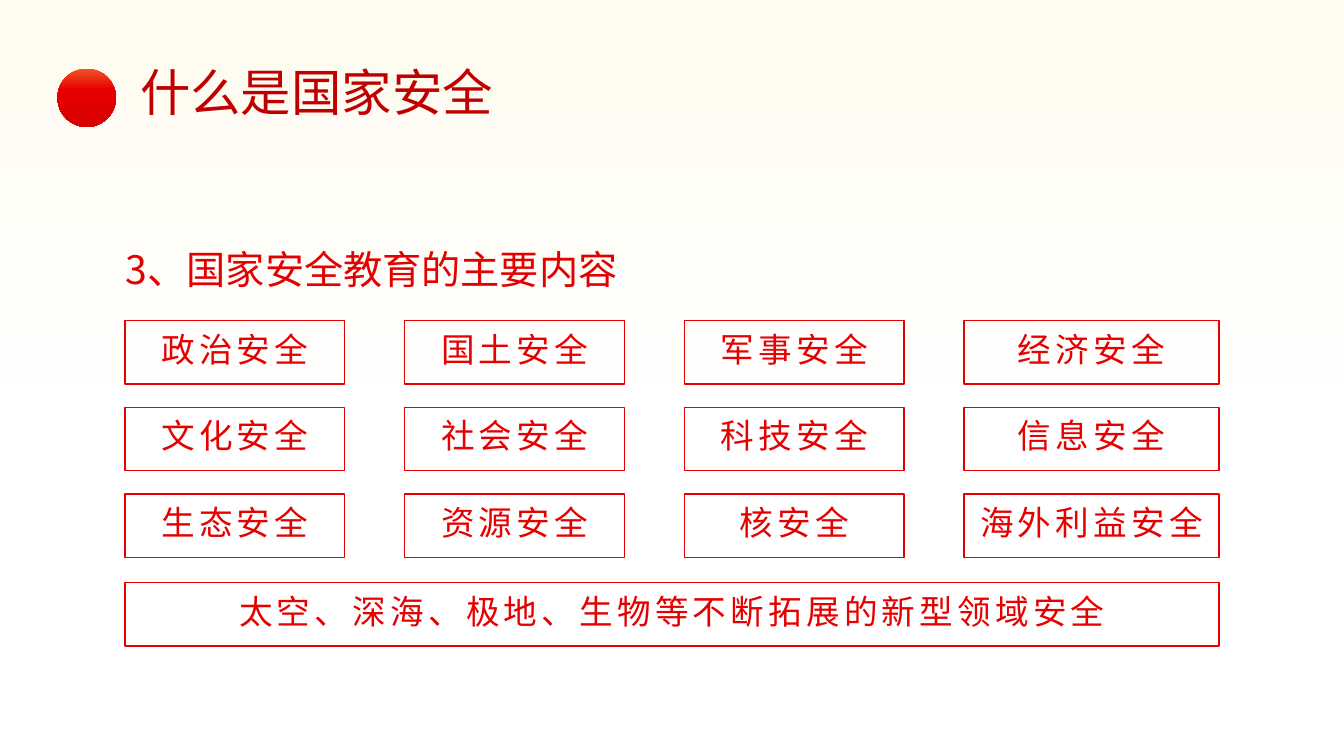
from copy import deepcopy
from dataclasses import dataclass

from lxml.etree import SubElement
from pptx import Presentation
from pptx.dml.color import RGBColor
from pptx.enum.shapes import MSO_SHAPE
from pptx.enum.text import MSO_ANCHOR, MSO_AUTO_SIZE, PP_ALIGN
from pptx.oxml.ns import qn
from pptx.util import Inches, Pt


@dataclass(frozen=True)
class Theme:
    font: str = "Noto Sans CJK SC"
    title_red: str = "C00000"
    heading_red: str = "E20000"
    box_red: str = "E60000"
    backdrop: tuple = ((0, "FEFBEF"), (0.57, "FFFFFF"))
    ball: tuple = ((0, "F05327"), (0.36, "E60000"), (1, "D60000"))
    title_size: int = 36
    heading_size: int = 28
    box_size: int = 24


theme = Theme()


def write(shape, text, size, color, align, spacing=0):
    """Put one line of text into the shape, centred vertically; spacing is in points."""
    frame = shape.text_frame
    frame.text = text
    frame.word_wrap = True
    frame.auto_size = MSO_AUTO_SIZE.NONE
    frame.vertical_anchor = MSO_ANCHOR.MIDDLE
    paragraph = frame.paragraphs[0]
    paragraph.alignment = align
    run = paragraph.runs[0]
    run.font.size = Pt(size)
    run.font.color.rgb = RGBColor.from_string(color)
    run.font.name = theme.font
    properties = run.font._element
    SubElement(properties, qn("a:ea"), typeface=theme.font)
    if spacing:
        properties.set("spc", str(spacing * 100))


def shade_downwards(fill, owner, stops):
    """Fill the owner element from top to bottom with (position, colour) stops."""
    fill.gradient()
    fill.gradient_angle = 270
    stop_list = next(owner.iter(qn("a:gsLst")))
    while len(stop_list) < len(stops):
        stop_list.append(deepcopy(stop_list[0]))
    for stop, (position, color) in zip(fill.gradient_stops, stops):
        stop.position = position
        stop.color.rgb = RGBColor.from_string(color)


prs = Presentation()
prs.slide_width, prs.slide_height = Inches(13.33), Inches(7.5)
slide = prs.slides.add_slide(prs.slide_layouts[5])
shade_downwards(slide.background.fill, slide._element, theme.backdrop)

# Title with its red ball
title = slide.shapes.title
title.left, title.top = Inches(1.29), Inches(0.55)
title.width, title.height = Inches(4.04), Inches(0.71)
write(title, "什么是国家安全", theme.title_size, theme.title_red, PP_ALIGN.LEFT)

ball = slide.shapes.add_shape(
    MSO_SHAPE.OVAL, Inches(0.57), Inches(0.68), Inches(0.58), Inches(0.58))
ball.shadow.inherit = False
ball.line.fill.background()
shade_downwards(ball.fill, ball._element, theme.ball)

heading = slide.shapes.add_textbox(
    Inches(1.15), Inches(2.38), Inches(5.22), Inches(0.57))
write(heading, "3、国家安全教育的主要内容", theme.heading_size,
      theme.heading_red, PP_ALIGN.LEFT)

# Fields of security: a grid of four columns above one full-width box
FIELDS = [
    ["政治安全", "国土安全", "军事安全", "经济安全"],
    ["文化安全", "社会安全", "科技安全", "信息安全"],
    ["生态安全", "资源安全", "核安全", "海外利益安全"],
]
NEW_FIELDS = "太空、深海、极地、生物等不断拓展的新型领域安全"
GRID_LEFT, LAST_LEFT, GRID_RIGHT = 1.24, 9.56, 12.09
GRID_TOP, ROW_STEP, NEW_FIELDS_TOP = 3.18, 0.86, 5.78
FIELD_WIDTH, FIELD_HEIGHT = 2.18, 0.63
column_step = (LAST_LEFT - GRID_LEFT) / 3

fields = []
for row, names in enumerate(FIELDS):
    for column, name in enumerate(names):
        left = GRID_LEFT + column * column_step
        width = GRID_RIGHT - LAST_LEFT if column == 3 else FIELD_WIDTH
        fields.append((name, left, GRID_TOP + row * ROW_STEP, width))
fields.append((NEW_FIELDS, GRID_LEFT, NEW_FIELDS_TOP, GRID_RIGHT - GRID_LEFT))

for name, left, top, width in fields:
    field = slide.shapes.add_shape(
        MSO_SHAPE.RECTANGLE, Inches(left), Inches(top),
        Inches(width), Inches(FIELD_HEIGHT))
    field.shadow.inherit = False
    field.fill.background()
    field.line.color.rgb = RGBColor.from_string(theme.box_red)
    field.line.width = Pt(1)
    field.text_frame.margin_bottom = Inches(0.12)
    write(field, name, theme.box_size, theme.box_red, PP_ALIGN.CENTER, spacing=3)

prs.save("out.pptx")
